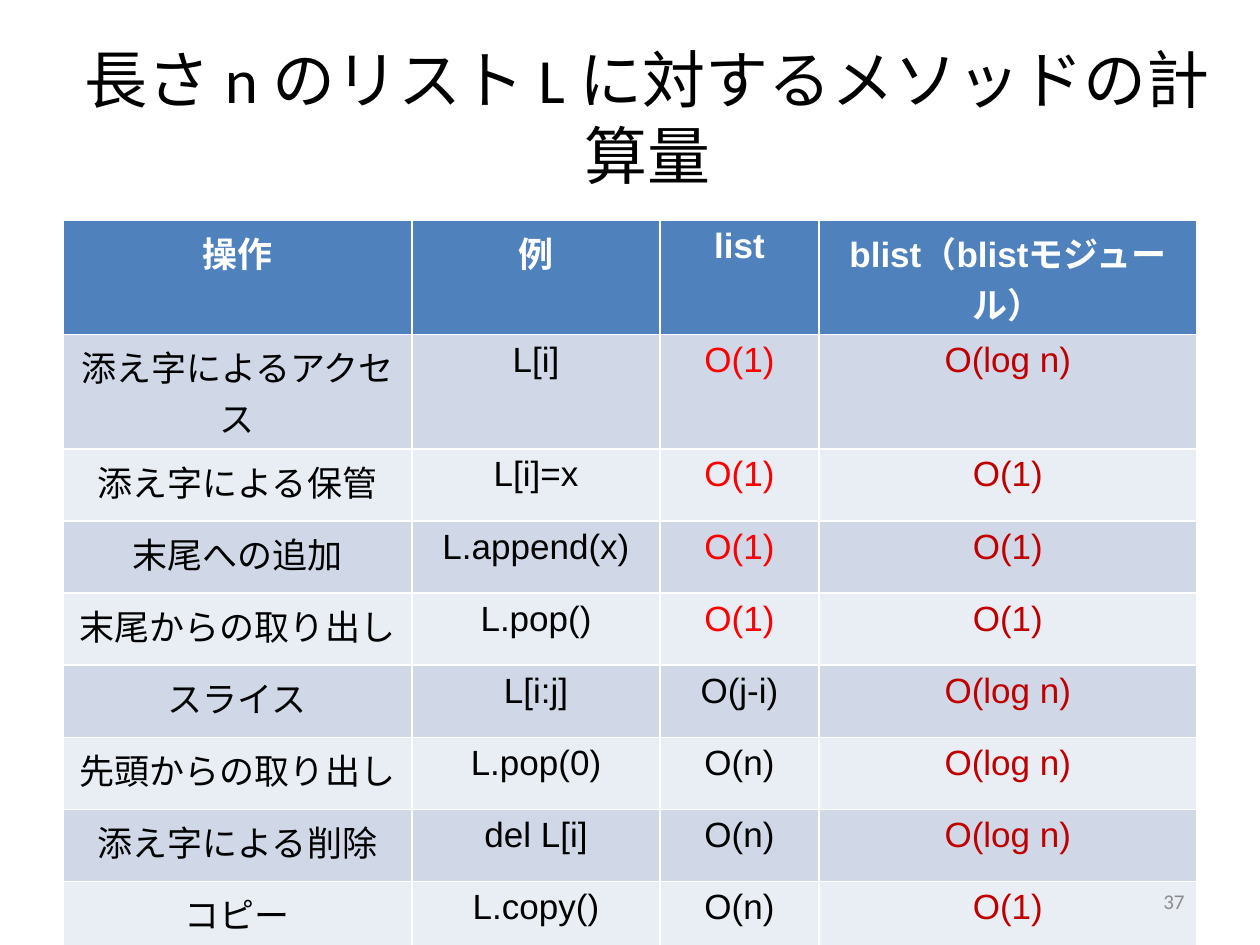
import pptx
import pptx.util
import pptx.dml.color
import pptx.enum.text

Align = pptx.enum.text.PP_ALIGN
Anchor = pptx.enum.text.MSO_ANCHOR

THEME = {
    "title": {"font": "Calibri", "size": 36, "color": "000000"},
    "header": {"font": "Arial", "size": 20, "color": "FFFFFF", "bold": True},
    "body": {"font": "Arial", "size": 20, "color": "000000"},
    "list_fast": {"font": "Arial", "size": 20, "color": "FF0000"},
    "blist": {"font": "Arial", "size": 20, "color": "C00000"},
    "number": {"font": "Calibri", "size": 12, "color": "8C8C8C"},
    "header_fill": "4F81BD",
    "band_fills": ["E9EDF4", "D0D8E8"],
}

ROWS = [
    ("操作", "例", "list", "blist（blistモジュール）"),
    ("添え字によるアクセス", "L[i]", "O(1)", "O(log n)"),
    ("添え字による保管", "L[i]=x", "O(1)", "O(1)"),
    ("末尾への追加", "L.append(x)", "O(1)", "O(1)"),
    ("末尾からの取り出し", "L.pop()", "O(1)", "O(1)"),
    ("スライス", "L[i:j]", "O(j-i)", "O(log n)"),
    ("先頭からの取り出し", "L.pop(0)", "O(n)", "O(log n)"),
    ("添え字による削除", "del L[i]", "O(n)", "O(log n)"),
    ("コピー", "L.copy()", "O(n)", "O(1)"),
]
COLUMN_WIDTHS = [2.77, 1.97, 1.26, 3]


def write(text_frame, text, style, alignment):
    text_frame.text = text
    paragraph = text_frame.paragraphs[0]
    paragraph.alignment = alignment
    paragraph.font.name = style["font"]
    paragraph.font.size = pptx.util.Pt(style["size"])
    paragraph.font.bold = style.get("bold", False)
    paragraph.font.color.rgb = pptx.dml.color.RGBColor.from_string(style["color"])


presentation = pptx.Presentation()
presentation.slide_width = pptx.util.Inches(10)
presentation.slide_height = pptx.util.Inches(7.5)
width, height = presentation.slide_width, presentation.slide_height
margin = int(width * 0.05)
content_width = width - 2 * margin
slide = presentation.slides.add_slide(presentation.slide_layouts.get_by_name("Title Only"))

# Title
title = slide.shapes.title
title.left, title.top = margin, int(height * 0.04)
title.width, title.height = pptx.util.Inches(9.27), int(height / 6)
title.text_frame.vertical_anchor = Anchor.MIDDLE
write(title.text_frame, "長さ n のリスト L に対するメソッドの計算量", THEME["title"], Align.CENTER)

# Table of complexities
table = slide.shapes.add_table(
    len(ROWS), len(COLUMN_WIDTHS), margin, pptx.util.Inches(1.75),
    content_width, pptx.util.Inches(5.15)).table
for column, column_width in zip(table.columns, COLUMN_WIDTHS):
    column.width = pptx.util.Inches(column_width)

for row_index, row in enumerate(ROWS):
    for column_index, text in enumerate(row):
        if row_index == 0:
            style, fill = THEME["header"], THEME["header_fill"]
        else:
            fill = THEME["band_fills"][row_index % 2]
            if column_index == 3:
                style = THEME["blist"]
            elif text == "O(1)":
                style = THEME["list_fast"]
            else:
                style = THEME["body"]
        cell = table.cell(row_index, column_index)
        cell.fill.solid()
        cell.fill.fore_color.rgb = pptx.dml.color.RGBColor.from_string(fill)
        write(cell.text_frame, text, style, Align.CENTER)

# Slide number
number_width = int(width * 0.23)
number = slide.shapes.add_textbox(
    width - margin - number_width, pptx.util.Inches(6.95), number_width, pptx.util.Inches(0.4))
number.text_frame.word_wrap = True
number.text_frame.vertical_anchor = Anchor.MIDDLE
write(number.text_frame, "37", THEME["number"], Align.RIGHT)

presentation.save("out.pptx")
